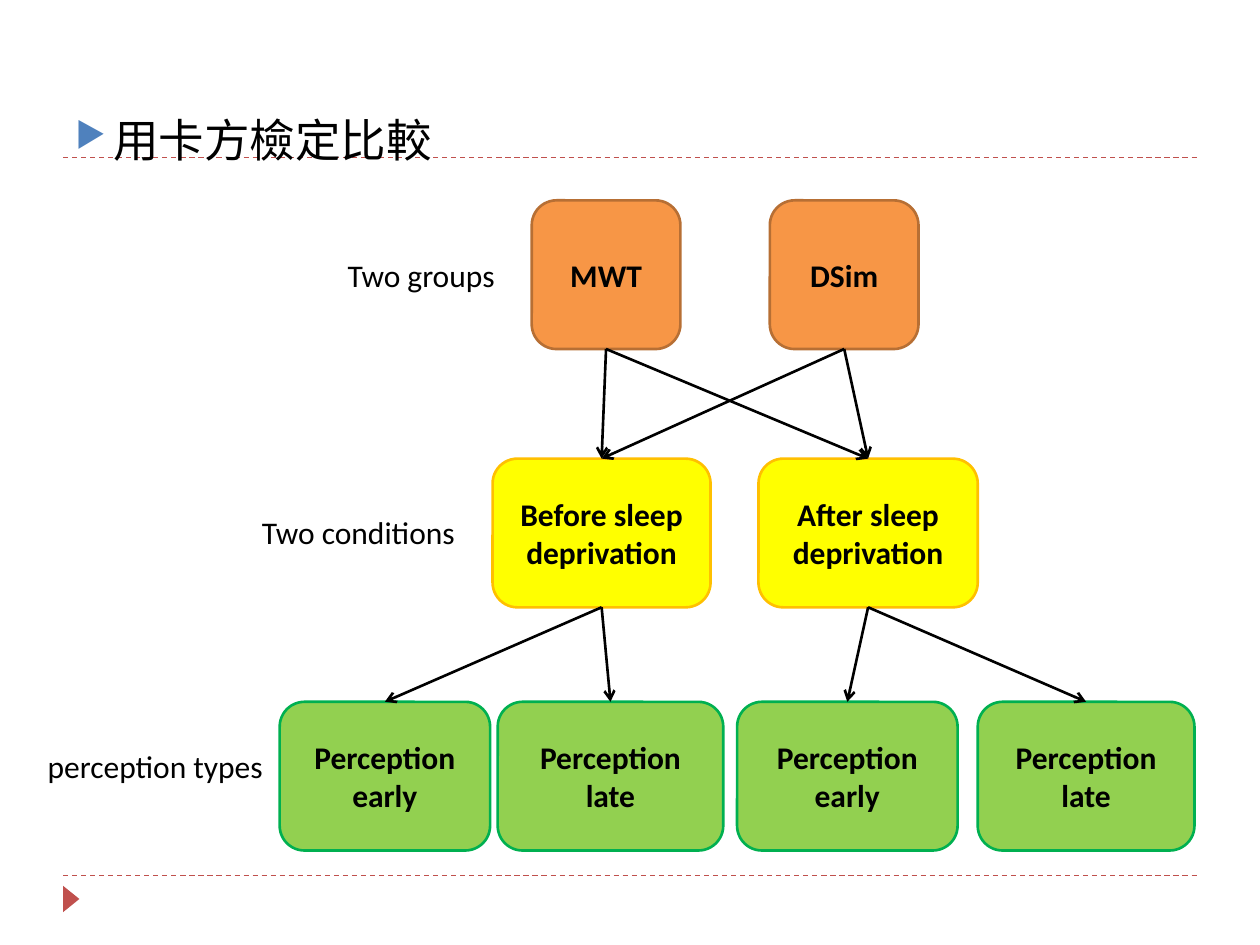
from lxml import etree
from pptx import Presentation
from pptx.dml.color import RGBColor
from pptx.enum.dml import MSO_LINE
from pptx.enum.shapes import MSO_CONNECTOR, MSO_SHAPE
from pptx.enum.text import MSO_ANCHOR, MSO_AUTO_SIZE, PP_ALIGN
from pptx.oxml import parse_xml
from pptx.oxml.ns import nsdecls, qn
from pptx.util import Inches, Pt

BLACK = RGBColor(0x00, 0x00, 0x00)
RED = RGBColor(0xC0, 0x50, 0x4D)
ORANGE = RGBColor(0xF7, 0x96, 0x46)
BROWN = RGBColor(0xB7, 0x6F, 0x34)
YELLOW = RGBColor(0xFF, 0xFF, 0x00)
AMBER = RGBColor(0xFF, 0xC0, 0x00)
LIGHT_GREEN = RGBColor(0x92, 0xD0, 0x50)
GREEN = RGBColor(0x00, 0xB0, 0x50)

BODY_FONT = "Calibri"
TITLE_FONT = "Noto Sans CJK SC"
NODE_HEIGHT = 1.18
TOP_SITE, BOTTOM_SITE = 0, 2


def style_text(para, size, font=BODY_FONT, bold=False):
    for span in para.runs:
        span.font.size = Pt(size)
        span.font.name = font
        span.font.bold = bold
        span.font.color.rgb = BLACK


def add_line(page, start, end, color, width):
    line = page.shapes.add_connector(
        MSO_CONNECTOR.STRAIGHT, *[Inches(v) for v in (*start, *end)])
    line.line.color.rgb = color
    line.line.width = Pt(width)
    etree.SubElement(line._element.spPr, qn("a:effectLst"))
    return line


def add_frame(page, left, top, width, height):
    """Dashed rules above and below, with a corner marker."""
    for y in (top, top + height):
        rule = add_line(page, (left, y), (left + width, y), RED, 0.75)
        rule.line.dash_style = MSO_LINE.DASH
    marker = page.shapes.add_shape(
        MSO_SHAPE.ISOSCELES_TRIANGLE, Inches(left - 0.04),
        Inches(top + height + 0.12), Inches(0.21), Inches(0.13))
    marker.rotation = 90
    marker.shadow.inherit = False
    marker.fill.solid()
    marker.fill.fore_color.rgb = RED
    marker.line.fill.background()


def add_heading(page, left, top, width, height, text):
    box = page.shapes.add_textbox(
        Inches(left), Inches(top), Inches(width), Inches(height))
    box.text_frame.word_wrap = True
    para = box.text_frame.paragraphs[0]
    para.text = text
    para.space_before = Pt(6)
    style_text(para, 26, TITLE_FONT)
    span_props = para.runs[0].font._element
    etree.SubElement(span_props, qn("a:ea")).set("typeface", TITLE_FONT)

    # Hanging triangle bullet
    props = para._p.get_or_add_pPr()
    props.set("marL", str(Inches(0.3)))
    props.set("indent", str(Inches(-0.3)))
    for bullet in ('<a:buClr %s><a:srgbClr val="4F81BD"/></a:buClr>',
                   '<a:buSzPct %s val="76000"/>',
                   '<a:buChar %s char="▶"/>'):
        props.append(parse_xml(bullet % nsdecls("a")))


def add_label(page, left, top, width, text):
    box = page.shapes.add_textbox(
        Inches(left), Inches(top), Inches(width), Inches(0.4))
    box.text_frame.word_wrap = False
    box.text_frame.auto_size = MSO_AUTO_SIZE.SHAPE_TO_FIT_TEXT
    box.text_frame.text = text
    style_text(box.text_frame.paragraphs[0], 18)


def add_level(page, top, fill, outline, nodes):
    """One row of rounded boxes, each given as left, width and text."""
    boxes = []
    for left, width, text in nodes:
        box = page.shapes.add_shape(
            MSO_SHAPE.ROUNDED_RECTANGLE, Inches(left), Inches(top),
            Inches(width), Inches(NODE_HEIGHT))
        box.shadow.inherit = False
        box.fill.solid()
        box.fill.fore_color.rgb = fill
        box.line.color.rgb = outline
        box.line.width = Pt(1.5)
        frame = box.text_frame
        frame.word_wrap = True
        frame.vertical_anchor = MSO_ANCHOR.MIDDLE
        frame.text = text
        frame.paragraphs[0].alignment = PP_ALIGN.CENTER
        style_text(frame.paragraphs[0], 18, bold=True)
        boxes.append(box)
    return boxes


def link(page, parent, child):
    arrow = add_line(page, (0, 0), (1, 1), BLACK, 1.5)
    arrow.begin_connect(parent, BOTTOM_SITE)
    arrow.end_connect(child, TOP_SITE)
    etree.SubElement(arrow.line._get_or_add_ln(), qn("a:tailEnd")).set("type", "arrow")


def add_tree(page):
    groups = add_level(page, 1.59, ORANGE, BROWN, [
        (4.22, 1.18, "MWT"), (6.11, 1.18, "DSim")])
    conditions = add_level(page, 3.64, YELLOW, AMBER, [
        (3.91, 1.73, "Before sleep deprivation"),
        (6.02, 1.74, "After sleep deprivation")])
    perceptions = add_level(page, 5.57, LIGHT_GREEN, GREEN, [
        (2.22, 1.67, "Perception early"), (3.95, 1.79, "Perception late"),
        (5.85, 1.75, "Perception early"), (7.76, 1.72, "Perception late")])

    # Every group meets both conditions; each condition has two perceptions
    for group in groups:
        for condition in conditions:
            link(page, group, condition)
    for index, perception in enumerate(perceptions):
        link(page, conditions[index // 2], perception)

    # Row labels
    add_label(page, 2.66, 1.98, 1.38, "Two groups")
    add_label(page, 1.98, 4.02, 1.75, "Two conditions")
    add_label(page, 0.28, 5.88, 1.93, "perception types")


def main():
    deck = Presentation()
    deck.slide_width, deck.slide_height = Inches(10), Inches(7.5)
    page = deck.slides.add_slide(deck.slide_layouts[6])
    add_frame(page, 0.5, 1.25, 9, 5.7)
    add_heading(page, 0.5, 0.84, 9, 5.9, "用卡方檢定比較")
    add_tree(page)
    deck.save("out.pptx")


if __name__ == "__main__":
    main()
